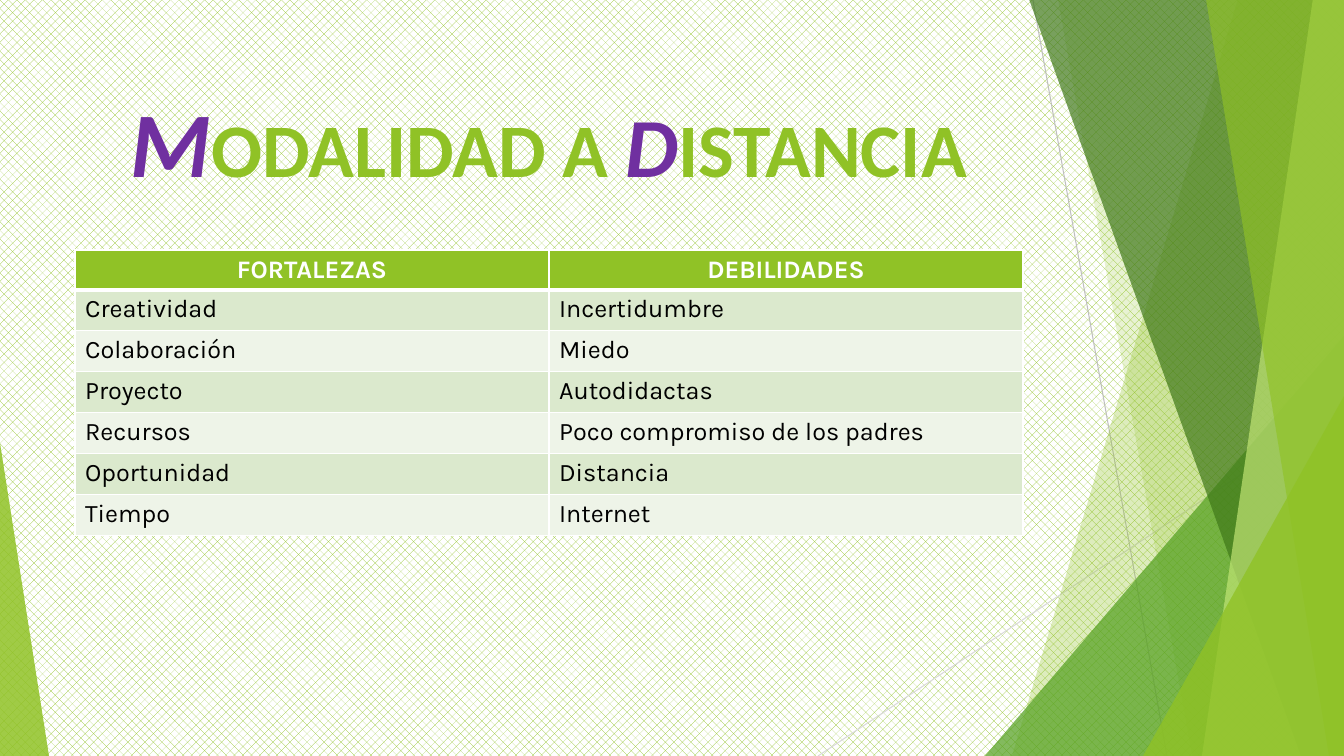
from dataclasses import dataclass

from lxml import etree
from pptx import Presentation
from pptx.dml.color import RGBColor
from pptx.enum.dml import MSO_PATTERN
from pptx.enum.shapes import MSO_CONNECTOR, MSO_SHAPE
from pptx.enum.text import MSO_ANCHOR, PP_ALIGN
from pptx.oxml.ns import qn
from pptx.util import Pt

STRAIGHT = MSO_CONNECTOR.STRAIGHT
TRIANGLE = MSO_SHAPE.ISOSCELES_TRIANGLE
PATTERN = MSO_PATTERN.from_xml("pct40")
MIDDLE = MSO_ANCHOR.MIDDLE
LEFT, CENTER = PP_ALIGN.LEFT, PP_ALIGN.CENTER

PX = 914400 / 100.8
WIDTH, HEIGHT = 1344, 756


@dataclass(frozen=True)
class Theme:
    green: str = "90C226"
    mid_green: str = "54A021"
    dark_green: str = "3F7819"
    light_green: str = "C0E474"
    purple: str = "7030A0"
    white: str = "FFFFFF"
    black: str = "000000"
    line_gray: str = "BFBFBF"
    pale_gray: str = "D9D9D9"
    bands: tuple = ("DBE9CD", "EEF4E8")
    title_font: str = "Calibri"
    table_font: str = "Karla"
    title_size: int = 54
    initial_m_size: int = 66
    initial_d_size: int = 60
    table_size: int = 18


T = Theme()

LINES = [((1033, 0), (1167, HEIGHT), T.line_gray),
         ((WIDTH, 406), (818, HEIGHT), T.pale_gray)]

# Panels reach the right edge: top-left x, bottom-left x, colour, opacity
BACK_PANELS = [(1238, 1012, T.green, 30), (1058, 1192, T.green, 20)]
FRONT_PANELS = [(1029, 1301, T.dark_green, 70),
                (1313, 1202, T.light_green, 70),
                (1206, 1329, T.green, 65)]

TITLE = [("M", T.initial_m_size, T.purple, True),
         ("ODALIDAD A ", T.title_size, T.green, False),
         ("D", T.initial_d_size, T.purple, True),
         ("ISTANCIA", T.title_size, T.green, False)]

ROWS = [("FORTALEZAS", "DEBILIDADES"),
        ("Creatividad", "Incertidumbre"),
        ("Colaboración", "Miedo"),
        ("Proyecto", "Autodidactas"),
        ("Recursos", "Poco compromiso de los padres"),
        ("Oportunidad", "Distancia"),
        ("Tiempo", "Internet")]
HEADER_HEIGHT, ROW_HEIGHT = 39, 41


def px(*values):
    return [round(v * PX) for v in values]


def rgb(color):
    return RGBColor.from_string(color)


def style_font(font, color, **values):
    for name, value in values.items():
        setattr(font, name, value)
    font.color.rgb = rgb(color)


def paint(sp, color, opacity):
    sp.shadow.inherit = False
    sp.fill.solid()
    sp.fill.fore_color.rgb = rgb(color)
    clr = sp._element.spPr.find(qn("a:solidFill"))[0]
    etree.SubElement(clr, qn("a:alpha"), val=str(opacity * 1000))
    sp.line.fill.background()


def add_line(s, start, end, color):
    line = s.shapes.add_connector(STRAIGHT, *px(*start, *end))
    line.line.color.rgb = rgb(color)
    line.line.width = Pt(0.75)
    etree.SubElement(line._element.spPr, qn("a:effectLst"))


def add_panel(s, top_x, bottom_x, color, opacity):
    builder = s.shapes.build_freeform(top_x, -1, scale=PX)
    builder.add_line_segments(
        [(WIDTH, -1), (WIDTH, HEIGHT), (bottom_x, HEIGHT)], close=True)
    paint(builder.convert_to_shape(), color, opacity)


def add_triangle(s, left, top, right, apex, color, opacity):
    sp = s.shapes.add_shape(
        TRIANGLE, *px(left, top, right - left, HEIGHT - top))
    sp.adjustments[0] = apex
    paint(sp, color, opacity)


def add_title(s):
    sp = s.shapes.title
    sp.left, sp.top, sp.width, sp.height = px(75, 68, 948, 145)
    sp._element.getparent().append(sp._element)  # in front of the decoration
    tf = sp.text_frame
    tf.word_wrap = True
    tf.vertical_anchor = MIDDLE
    p = tf.paragraphs[0]
    p.alignment = CENTER
    for text, size, color, italic in TITLE:
        r = p.add_run()
        r.text = text
        style_font(r.font, color, name=T.title_font, size=Pt(size),
                   bold=True, italic=italic)


def set_borders(cell, widths):
    tc_pr = cell._tc.get_or_add_tcPr()
    for side, width in widths.items():
        ln = etree.SubElement(tc_pr, qn(f"a:ln{side}"), w=str(int(Pt(width))))
        fill = etree.SubElement(ln, qn("a:solidFill"))
        etree.SubElement(fill, qn("a:srgbClr"), val=T.white)


def format_cell(cell, text, row):
    header = row == 0
    set_borders(cell, {"L": 1, "R": 1, "T": 3 if row == 1 else 1,
                       "B": 3 if header else 1})
    cell.fill.solid()
    cell.fill.fore_color.rgb = rgb(T.green if header else T.bands[(row - 1) % 2])
    p = cell.text_frame.paragraphs[0]
    p.alignment = CENTER if header else LEFT
    r = p.add_run()
    r.text = text
    style_font(r.font, T.white if header else T.black, name=T.table_font,
               size=Pt(T.table_size), bold=header)


def add_comparison(s):
    height = HEADER_HEIGHT + ROW_HEIGHT * (len(ROWS) - 1)
    table = s.shapes.add_table(len(ROWS), 2, *px(75, 250, 948, height)).table
    for i, texts in enumerate(ROWS):
        table.rows[i].height = px(ROW_HEIGHT if i else HEADER_HEIGHT)[0]
        for j, text in enumerate(texts):
            format_cell(table.cell(i, j), text, i)


def main():
    prs = Presentation()
    prs.slide_width, prs.slide_height = px(WIDTH, HEIGHT)
    s = prs.slides.add_slide(prs.slide_layouts[5])

    # Patterned background
    fill = s.background.fill
    fill.patterned()
    fill.pattern = PATTERN
    fill.fore_color.rgb = rgb(T.green)
    fill.back_color.rgb = rgb(T.white)

    # Decoration, back to front
    for line in LINES:
        add_line(s, *line)
    for panel in BACK_PANELS:
        add_panel(s, *panel)
    add_triangle(s, 985, 336, WIDTH, 1, T.mid_green, 72)
    for panel in FRONT_PANELS:
        add_panel(s, *panel)
    add_triangle(s, 1143, 396, WIDTH, 1, T.green, 80)
    add_triangle(s, 0, 443, 49, 0, T.green, 85)

    # Content
    add_title(s)
    add_comparison(s)
    prs.save("out.pptx")


if __name__ == "__main__":
    main()
